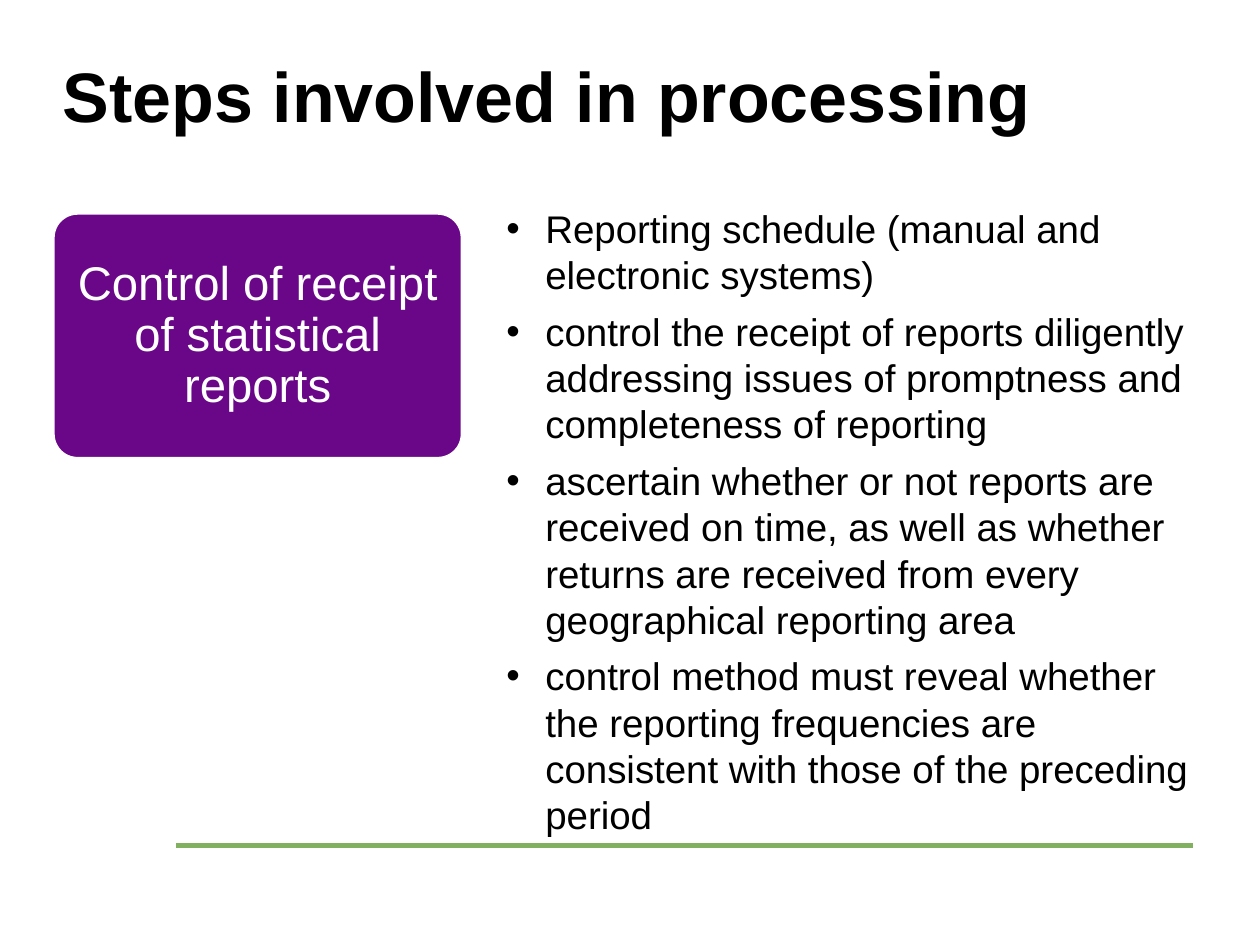
from lxml.etree import SubElement
from pptx import Presentation
from pptx.dml.color import RGBColor
from pptx.enum.shapes import MSO_CONNECTOR, MSO_SHAPE
from pptx.enum.text import MSO_ANCHOR, PP_ALIGN
from pptx.oxml.ns import qn
from pptx.util import Inches, Pt

BLACK = RGBColor(0x00, 0x00, 0x00)
WHITE = RGBColor(0xFF, 0xFF, 0xFF)
PURPLE = RGBColor(0x6A, 0x07, 0x88)
GREEN = RGBColor(0x82, 0xB0, 0x61)
FONT = "Arial"

POINTS = [
    "Reporting schedule (manual and electronic systems)",
    "control the receipt of reports diligently addressing issues of "
    "promptness and completeness of reporting",
    "ascertain whether or not reports are received on time, as well as "
    "whether returns are received from every geographical reporting area",
    "control method must reveal whether the reporting frequencies are "
    "consistent with those of the preceding period",
]


def set_font(p, size, color, bold=False):
    for r in p.runs:
        r.font.name = FONT
        r.font.size = Pt(size)
        r.font.bold = bold
        r.font.color.rgb = color


def set_margins(tf, margin):
    tf.margin_left = tf.margin_right = Inches(margin)
    tf.margin_top = tf.margin_bottom = Inches(margin)


def add_bullet(p):
    pPr = p._p.get_or_add_pPr()
    pPr.set("marL", str(Inches(0.31)))
    pPr.set("indent", str(-Inches(0.31)))
    SubElement(pPr, qn("a:buFont"), typeface=FONT)
    SubElement(pPr, qn("a:buChar"), char="•")


def add_footer_rule(s):
    y = Inches(6.71)
    line = s.shapes.add_connector(
        MSO_CONNECTOR.STRAIGHT, Inches(1.4), y, Inches(9.47), y)
    line.line.color.rgb = GREEN
    line.line.width = Pt(3)
    SubElement(line._element.spPr, qn("a:effectLst"))


def add_title(s, text):
    tf = s.shapes.add_textbox(
        Inches(0.5), Inches(0.42), Inches(9), Inches(1.25)).text_frame
    tf.word_wrap = True
    set_margins(tf, 0)
    tf.text = text
    set_font(tf.paragraphs[0], 40, BLACK, bold=True)


def add_step_box(s, text):
    sp = s.shapes.add_shape(
        MSO_SHAPE.ROUNDED_RECTANGLE,
        Inches(0.42), Inches(1.69), Inches(3.25), Inches(1.95))
    sp.adjustments[0] = 0.1
    sp.shadow.inherit = False
    sp.fill.solid()
    sp.fill.fore_color.rgb = PURPLE
    sp.line.color.rgb = WHITE
    sp.line.width = Pt(2)
    tf = sp.text_frame
    tf.word_wrap = True
    tf.vertical_anchor = MSO_ANCHOR.MIDDLE
    set_margins(tf, 0.1)
    tf.text = text
    p = tf.paragraphs[0]
    p.alignment = PP_ALIGN.CENTER
    p.line_spacing = 0.9
    set_font(p, 27, WHITE)


def add_bullet_list(s, points):
    tf = s.shapes.add_textbox(
        Inches(3.92), Inches(1.58), Inches(5.67), Inches(5.17)).text_frame
    tf.word_wrap = True
    tf.text = "\n".join(points)
    for p in tf.paragraphs:
        add_bullet(p)
        p.space_after = Pt(6)
        set_font(p, 22, BLACK)


def main():
    prs = Presentation()
    prs.slide_width, prs.slide_height = Inches(10), Inches(7.5)
    s = prs.slides.add_slide(prs.slide_layouts[6])
    add_footer_rule(s)
    add_title(s, "Steps involved in processing")
    add_step_box(s, "Control of receipt of statistical reports")
    add_bullet_list(s, POINTS)
    prs.save("out.pptx")


if __name__ == "__main__":
    main()
